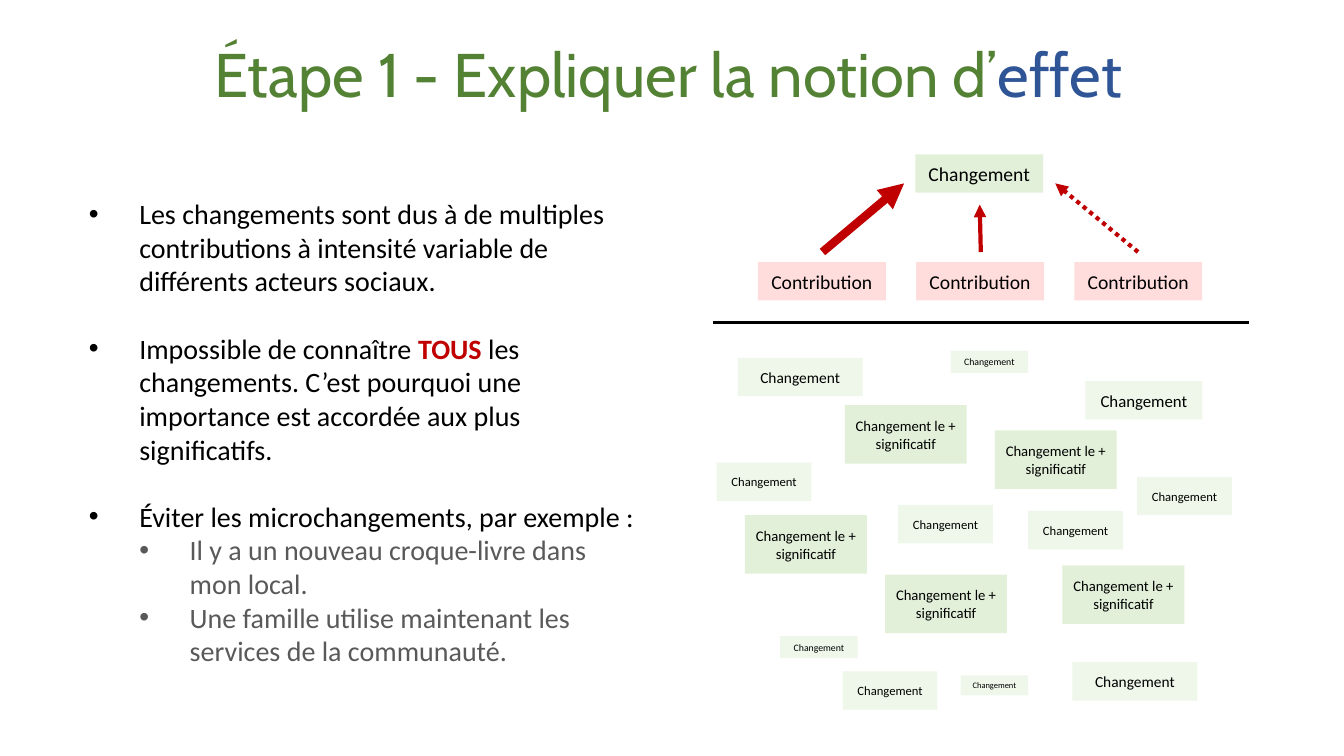
"""Build the slide that explains the notion of effect."""
from lxml.etree import SubElement
from pptx import Presentation
from pptx.dml.color import RGBColor
from pptx.enum.dml import MSO_LINE
from pptx.enum.shapes import MSO_CONNECTOR, MSO_SHAPE
from pptx.enum.text import MSO_ANCHOR, MSO_AUTO_SIZE, PP_ALIGN
from pptx.oxml.ns import qn
from pptx.util import Pt

BLACK, RED, GRAY = "000000", "C00000", "595959"
GREEN, PALE, PINK = "E2F0D9", "EEF7E9", "FFDDDD"

TITLE = [("Étape 1 - Expliquer la notion d’", "548235"), ("effet", "2F5597")]

POINTS = [
    (0, 0, [("Les changements sont dus à de multiples contributions à intensité "
             "variable de différents acteurs sociaux.", BLACK)]),
    (0, 24, [("Impossible de connaître ", BLACK), ("TOUS", RED),
             (" les changements. C’est pourquoi une importance est accordée "
              "aux plus significatifs.", BLACK)]),
    (0, 24, [("Éviter les microchangements, par exemple :", BLACK)]),
    (1, 0, [("Il y a un nouveau croque-livre dans mon local.", GRAY)]),
    (1, 0, [("Une famille utilise maintenant les services de la communauté.", GRAY)]),
]

CHANGE, MAIN = "Changement", "Changement le + significatif"
BOXES = [
    (CHANGE, 14, GREEN, 91.4, 27.4, [(653.8, 110.2)]),
    ("Contribution", 14, PINK, 91.4, 27.4,
     [(541.4 + 113 * i, 187.2) for i in range(3)]),
    (CHANGE, 6, PALE, 48.2, 14.4, [(686.2, 482.4)]),
    (CHANGE, 7, PALE, 55.4, 15.8, [(557.3, 454.3), (679, 250.6)]),
    (CHANGE, 9, PALE, 67.7, 27.4,
     [(734.4, 365), (601.9, 479.5), (641.5, 360.7), (511.9, 330.5), (812.2, 340.6)]),
    (CHANGE, 11, PALE, 89.3, 27.4, [(527, 255.6), (766.1, 473)]),
    (CHANGE, 12, PALE, 83.5, 27.4, [(775.4, 272.2)]),
    (MAIN, 10.5, GREEN, 87.1, 41.8,
     [(532.1, 367.9), (632.2, 410.4), (603.4, 289.4), (710.6, 307.4), (758.9, 403.9)]),
]

RULE = (509, 230.4, 892.1, 230.4)
ARROWS = [
    ((587.5, 180, 645.8, 131), 6, None),
    ((700.6, 180, 699.8, 146.2), 3, None),
    ((812.9, 180, 753.8, 131), 3, MSO_LINE.ROUND_DOT),
]


def paint(color, code):
    color.rgb = RGBColor.from_string(code)


def add_run(para, text, size, code, font="Calibri", bold=False):
    run = para.add_run()
    run.text = text
    run.font.size = Pt(size)
    run.font.name = font
    run.font.bold = bold
    paint(run.font.color, code)


def add_title(slide):
    title = slide.shapes.title
    title.left, title.top, title.width, title.height = map(Pt, (89.3, 33.1, 776.2, 43.9))
    frame = title.text_frame
    frame.auto_size = MSO_AUTO_SIZE.NONE
    frame.vertical_anchor = MSO_ANCHOR.MIDDLE
    para = frame.paragraphs[0]
    para.alignment = PP_ALIGN.CENTER
    para.line_spacing = 0.9
    for text, code in TITLE:
        add_run(para, text, 44, code, "Cabin")


def add_points(slide):
    frame = slide.shapes.add_textbox(*map(Pt, (60.5, 137.5, 397.4, 344.9))).text_frame
    frame.word_wrap = True
    frame.margin_left = frame.margin_right = Pt(3)
    frame.margin_top = frame.margin_bottom = Pt(3)
    for i, (level, gap, runs) in enumerate(POINTS):
        para = frame.add_paragraph() if i else frame.paragraphs[0]
        para.level = level
        para.space_before = Pt(gap)
        props = para._p.get_or_add_pPr()
        props.set("marL", str(Pt(36 * (level + 1))))
        props.set("indent", str(Pt(-36)))
        SubElement(props, qn("a:buFont")).set("typeface", "Arial")
        SubElement(props, qn("a:buChar")).set("char", "•")
        for text, code in runs:
            add_run(para, text, 20, code, bold=code == RED)


def add_box(slide, text, size, fill, *place):
    box = slide.shapes.add_shape(MSO_SHAPE.RECTANGLE, *map(Pt, place))
    box.shadow.inherit = False
    box.fill.solid()
    paint(box.fill.fore_color, fill)
    box.line.fill.background()
    frame = box.text_frame
    frame.word_wrap = True
    frame.vertical_anchor = MSO_ANCHOR.MIDDLE
    para = frame.paragraphs[0]
    para.alignment = PP_ALIGN.CENTER
    add_run(para, text, size, BLACK)


def add_line(slide, ends, code, width, dash=None, arrow=False):
    link = slide.shapes.add_connector(MSO_CONNECTOR.STRAIGHT, *map(Pt, ends))
    link.line.width = Pt(width)
    paint(link.line.color, code)
    if dash:
        link.line.dash_style = dash
    if arrow:
        SubElement(link.line._get_or_add_ln(), qn("a:tailEnd")).set("type", "triangle")
    SubElement(link._element.spPr, qn("a:effectLst"))


def main():
    deck = Presentation()
    deck.slide_width, deck.slide_height = Pt(960), Pt(540)
    slide = deck.slides.add_slide(deck.slide_layouts[5])
    add_title(slide)
    add_points(slide)
    add_line(slide, RULE, BLACK, 2.25)
    for text, size, fill, wide, high, spots in BOXES:
        for left, top in spots:
            add_box(slide, text, size, fill, left, top, wide, high)
    for ends, width, dash in ARROWS:
        add_line(slide, ends, RED, width, dash, True)
    deck.save("out.pptx")


if __name__ == "__main__":
    main()
